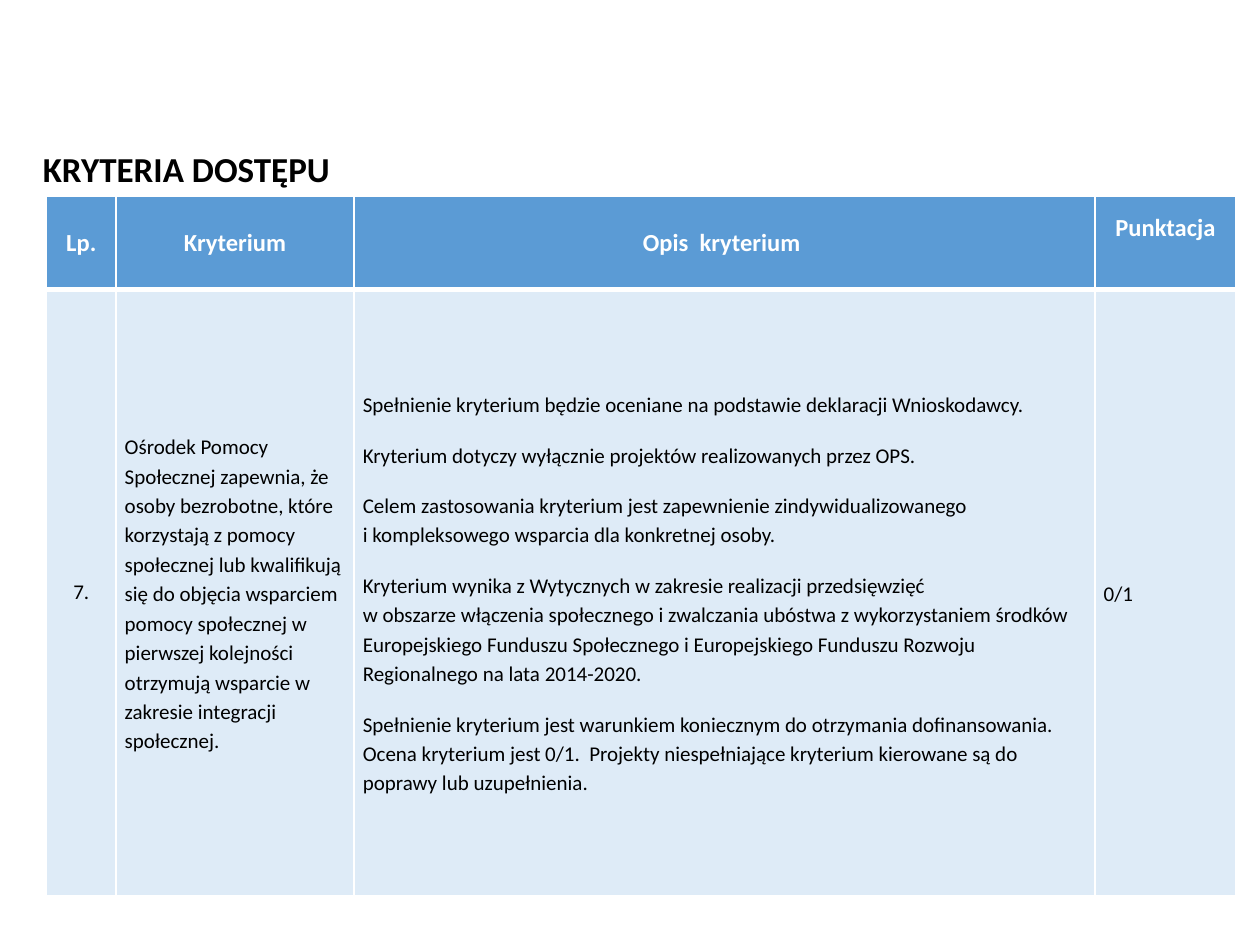
import pptx
import pptx.util
import pptx.dml.color
import pptx.enum.text
import pptx.oxml
import pptx.oxml.ns

Inches, Pt = pptx.util.Inches, pptx.util.Pt
RGB = pptx.dml.color.RGBColor
ALIGN = pptx.enum.text.PP_ALIGN
MIDDLE = pptx.enum.text.MSO_ANCHOR.MIDDLE

WHITE = RGB(0xFF, 0xFF, 0xFF)
BLACK = RGB(0, 0, 0)
BLUE = RGB(0x5B, 0x9B, 0xD5)
PALE = RGB(0xDE, 0xEB, 0xF7)
FONT = "Calibri"

TITLE = "KRYTERIA DOSTĘPU"
HEADS = ["Lp.", "Kryterium", "Opis  kryterium ", "Punktacja"]
BODY = [
    ["7."],
    ["Ośrodek Pomocy Społecznej zapewnia, że osoby bezrobotne, które "
     "korzystają z pomocy społecznej lub kwalifikują się do objęcia wsparciem "
     "pomocy społecznej w pierwszej kolejności otrzymują wsparcie w zakresie "
     "integracji społecznej."],
    ["Spełnienie kryterium będzie oceniane na podstawie deklaracji Wnioskodawcy.",
     "Kryterium dotyczy wyłącznie projektów realizowanych przez OPS.",
     "Celem zastosowania kryterium jest zapewnienie zindywidualizowanego\n"
     "i kompleksowego wsparcia dla konkretnej osoby.",
     "Kryterium wynika z Wytycznych w zakresie realizacji przedsięwzięć \n"
     "w obszarze włączenia społecznego i zwalczania ubóstwa z wykorzystaniem "
     "środków Europejskiego Funduszu Społecznego i Europejskiego Funduszu "
     "Rozwoju Regionalnego na lata 2014-2020.",
     "Spełnienie kryterium jest warunkiem koniecznym do otrzymania "
     "dofinansowania. Ocena kryterium jest 0/1.  Projekty niespełniające "
     "kryterium kierowane są do poprawy lub uzupełnienia."],
    ["0/1"],
]
COLS = [0.55, 1.89, 5.88, 1.12]
ROWS = [0.74, 4.81]


def style(para, size, color, bold, align):
    para.alignment = align
    for run in para.runs:
        font = run.font
        font.name, font.size, font.bold = FONT, Pt(size), bold
        font.color.rgb = color


def border(cell, top, base):
    """Draw white cell edges; top and base are widths in points."""
    props = cell._tc.get_or_add_tcPr()
    edges = {"lnL": 1, "lnR": 1, "lnT": top, "lnB": base}
    for spot, (tag, width) in enumerate(edges.items()):
        line = pptx.oxml.parse_xml(
            f'<a:{tag} {pptx.oxml.ns.nsdecls("a")} w="{Pt(width)}">'
            f'<a:solidFill><a:srgbClr val="{WHITE}"/></a:solidFill></a:{tag}>')
        props.insert(spot, line)


def fill(cell, color, paras):
    cell.fill.solid()
    cell.fill.fore_color.rgb = color
    cell.vertical_anchor = MIDDLE
    cell.text_frame.text = paras[0]
    for text in paras[1:]:
        cell.text_frame.add_paragraph().text = text
    for para in cell.text_frame.paragraphs:
        para.text = para.text.replace("\n", "\v")
    return cell.text_frame.paragraphs


def main():
    deck = pptx.Presentation()
    deck.slide_width, deck.slide_height = Inches(10), Inches(7.5)
    slide = deck.slides.add_slide(deck.slide_layouts[5])

    title = slide.shapes.title
    title.left, title.top = Inches(0.24), Inches(1.12)
    title.width, title.height = Inches(3.7), Inches(0.44)
    title.text_frame.text = TITLE
    title.text_frame.vertical_anchor = MIDDLE
    style(title.text_frame.paragraphs[0], 20, BLACK, True, ALIGN.LEFT)

    table = slide.shapes.add_table(
        len(ROWS), len(COLS), Inches(0.37), Inches(1.56),
        Inches(sum(COLS)), Inches(sum(ROWS))).table
    for row, height in zip(table.rows, ROWS):
        row.height = Inches(height)

    for col, (width, head, texts) in enumerate(zip(COLS, HEADS, BODY)):
        table.columns[col].width = Inches(width)

        cell = table.cell(0, col)
        for para in fill(cell, BLUE, [head]):
            style(para, 14, WHITE, True, ALIGN.CENTER)
        border(cell, 1, 3)

        cell = table.cell(1, col)
        for spot, para in enumerate(fill(cell, PALE, texts)):
            style(para, 12, BLACK, False, ALIGN.LEFT if col else ALIGN.CENTER)
            if col:
                para.line_spacing = 1.15
                para.space_before = Pt(6 if spot else 0)
                para.space_after = Pt(6)
        if col:
            cell.margin_left = cell.margin_right = Inches(0.07)
            cell.margin_top = cell.margin_bottom = 0
        border(cell, 3, 1)

    # The score heading sits above the middle of its row.
    table.cell(0, len(COLS) - 1).margin_bottom = Inches(0.29)
    deck.save("out.pptx")


if __name__ == "__main__":
    main()
